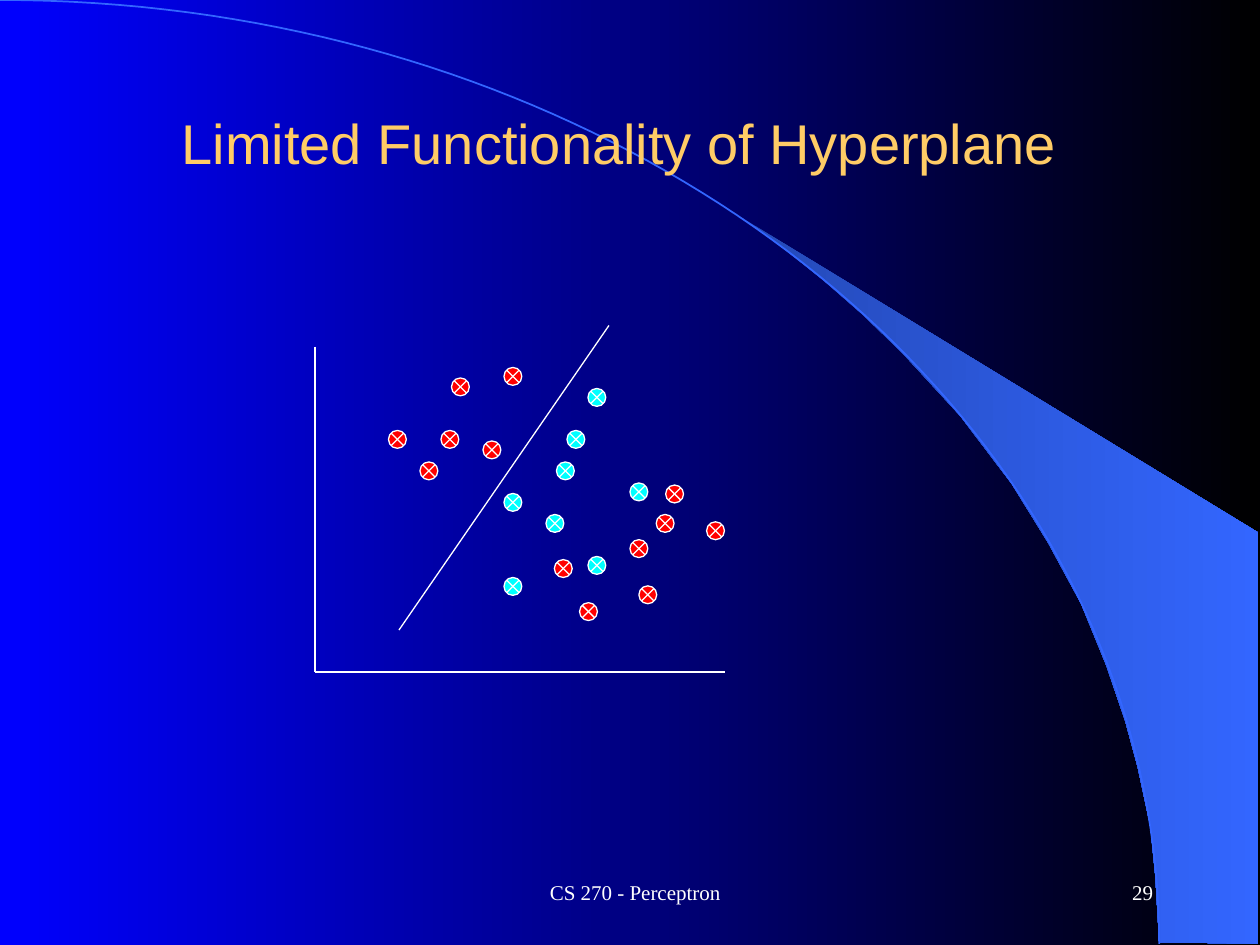
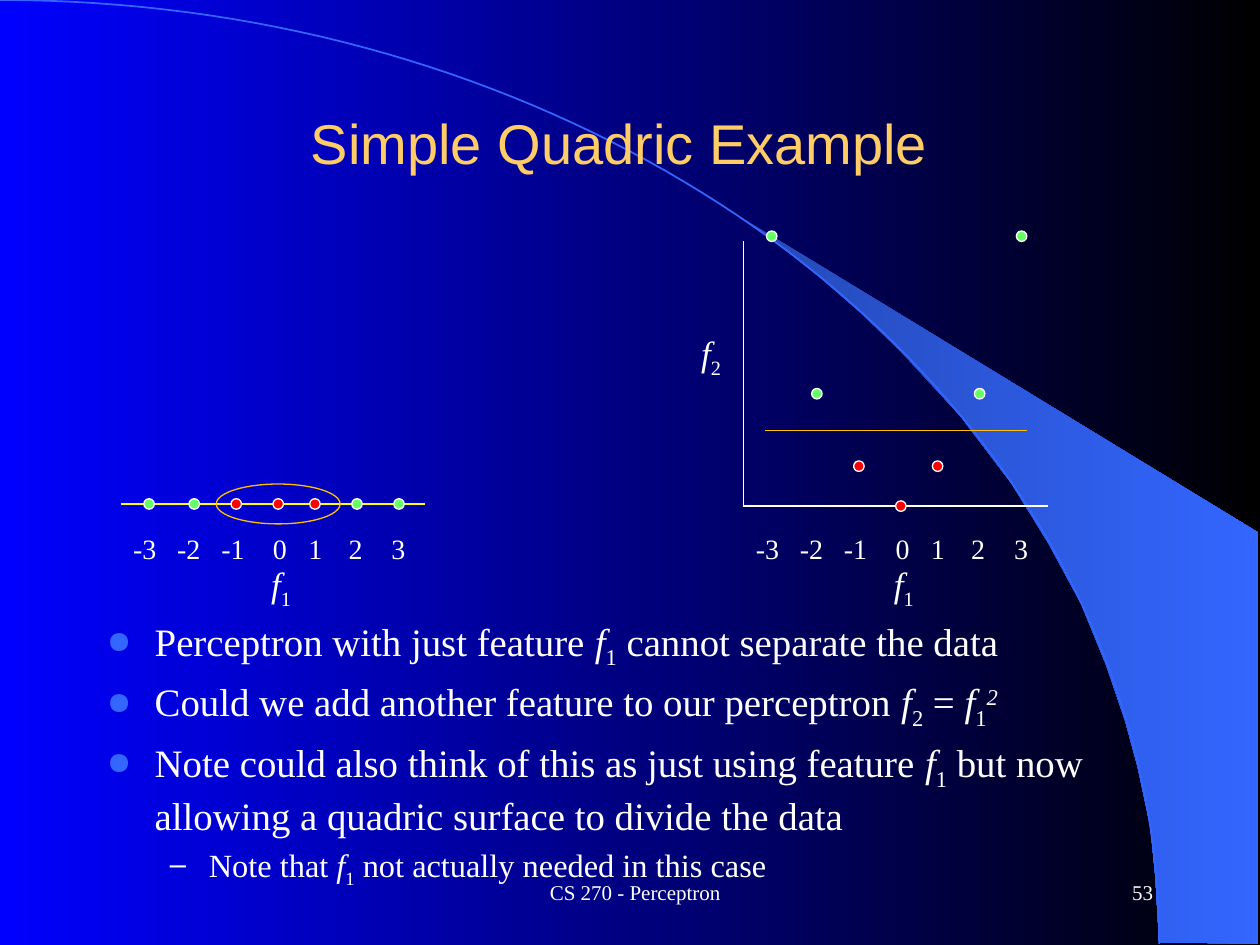
from dataclasses import dataclass

from lxml import etree
from pptx import Presentation
from pptx.dml.color import RGBColor
from pptx.enum.shapes import MSO_CONNECTOR, MSO_SHAPE
from pptx.enum.text import MSO_ANCHOR, PP_ALIGN
from pptx.oxml.ns import qn
from pptx.util import Emu, Inches, Pt

STRAIGHT = MSO_CONNECTOR.STRAIGHT
CIRCLE = MSO_SHAPE.OVAL
CROSSED_CIRCLE = MSO_SHAPE.FLOWCHART_SUMMING_JUNCTION
TOP, MIDDLE = MSO_ANCHOR.TOP, MSO_ANCHOR.MIDDLE
LEFT, CENTER, RIGHT = PP_ALIGN.LEFT, PP_ALIGN.CENTER, PP_ALIGN.RIGHT

BLUE = RGBColor(0x00, 0x00, 0xFF)
BLACK = RGBColor(0x00, 0x00, 0x00)
WHITE = RGBColor(0xFF, 0xFF, 0xFF)
GOLD = RGBColor(0xFF, 0xCC, 0x66)
AMBER = RGBColor(0xFF, 0xC0, 0x00)
YELLOW = RGBColor(0xFF, 0xFF, 0x00)
RED = RGBColor(0xFF, 0x00, 0x00)
CYAN = RGBColor(0x00, 0xFF, 0xFF)
GREEN = RGBColor(0x66, 0xFF, 0x66)
SKY = RGBColor(0x33, 0x66, 0xFF)
DEEP_SKY = RGBColor(0x24, 0x49, 0xB6)

SERIF, SANS = "Times New Roman", "Arial"
THIN = Pt(0.75)

# The slide is a grid of 120 columns by 90 rows
SLIDE_WIDTH, SLIDE_HEIGHT = Inches(10), Inches(7.5)
COLUMNS, ROWS = 120, 90
CELL = SLIDE_WIDTH / COLUMNS


def cells(count):
    return Emu(round(count * CELL))


@dataclass
class Box:
    """An area of the slide, in grid cells."""
    left: float
    top: float
    width: float
    height: float

    def inner(self, left, top, width, height):
        return Box(self.left + left, self.top + top, width, height)

    def point(self, across, down):
        return cells(self.left + across), cells(self.top + down)

    def emu(self):
        return [cells(n) for n in (self.left, self.top, self.width, self.height)]


PAGE = Box(0, 0, COLUMNS, ROWS)
TITLE = Box(8, 8, 102, 11)
FOOTER = Box(38, 82, 45, 6)
PAGE_NUMBER = Box(86, 82, 25, 6)
SCATTER = Box(30, 33, 39, 31)
NUMBER_LINE = Box(11.5, 23, 29, 25)
QUADRIC_PLOT = Box(70.8, 23, 29, 25.2)
BODY = Box(9, 58.2, 102, 23.4)

# Background curve and the wedge beside it, in inches
ARC = [(0, 0), (5.08, 0), (9.2, 3.35), (9.2, 7.49)]
ARC_STEPS = 80
WEDGE = [
    (9.2, 7.48), (9.99, 7.49), (9.99, 4.23), (5.89, 1.73), (6.24, 1.99),
    (6.53, 2.22), (6.85, 2.5), (7.16, 2.8), (7.62, 3.3), (8.03, 3.84),
    (8.32, 4.31), (8.58, 4.79), (8.78, 5.28), (8.93, 5.72), (9.03, 6.09),
    (9.13, 6.56), (9.17, 6.96)]

# Top left corners of the scattered points, in cells of the plot
SCATTER_POINTS = {
    CYAN: [(26, 4), (18, 14), (23, 11), (24, 8), (18, 22), (22, 16), (30, 13),
           (26, 20)],
    RED: [(10, 11), (13, 3), (33.4, 13.2), (16, 9), (7, 8), (18, 2), (12, 8),
          (37.3, 16.7), (32.5, 16), (30.85, 22.8), (30, 18.4), (25.2, 24.4),
          (22.8, 20.3)]}

# Feature value: column of its dot on the axis
FEATURE_COLUMNS = {-3: 2.7, -2: 7, -1: 11, 0: 15, 1: 18.5, 2: 22.5, 3: 26.5}
# Feature size: rows above the axis in the quadric plot
QUADRIC_ROWS = {0: 0, 1: 3.8, 2: 10.7, 3: 25.7}
TICK_TABS = [0.35, 0.7, 1.11, 1.39, 1.71, 2.05]

BULLETS = [
    "Perceptron with just feature |f|_1| cannot separate the data",
    "Could we add another feature to our perceptron |f|_2| = |f|_1|^2",
    "Note could also think of this as just using feature |f|_1| but now "
    "allowing a quadric surface to divide the data"]
SUB_BULLET = "Note that |f|_1| not actually needed in this case"


# Drawing helpers

def set_gradient(fill, start, end):
    fill.gradient()
    fill.gradient_angle = 0
    for stop, color in zip(fill.gradient_stops, (start, end)):
        stop.color.rgb = color


def add_line(slide, start, end, color=WHITE):
    line = slide.shapes.add_connector(STRAIGHT, *start, *end)
    line.line.color.rgb = color
    line.line.width = THIN
    etree.SubElement(line._element.spPr, qn("a:effectLst"))


def add_mark(slide, kind, box, fill, outline=WHITE):
    shape = slide.shapes.add_shape(kind, *box.emu())
    shape.shadow.inherit = False
    if fill is None:
        shape.fill.background()
    else:
        shape.fill.solid()
        shape.fill.fore_color.rgb = fill
    shape.line.color.rgb = outline
    shape.line.width = THIN


def add_outline(slide, points, close):
    points = [(Inches(x), Inches(y)) for x, y in points]
    builder = slide.shapes.build_freeform(*points[0])
    builder.add_line_segments(points[1:], close=close)
    shape = builder.convert_to_shape()
    shape.shadow.inherit = False
    return shape


def add_frame(slide, box, anchor=TOP):
    frame = slide.shapes.add_textbox(*box.emu()).text_frame
    frame.word_wrap = True
    frame.vertical_anchor = anchor
    return frame


def style(paragraph, size, color=WHITE, font=SERIF, align=LEFT):
    paragraph.alignment = align
    paragraph.font.size = Pt(size)
    paragraph.font.name = font
    paragraph.font.color.rgb = color


def add_formula(paragraph, markup):
    """Pieces are split by |; f is italic, _ lowers and ^ raises."""
    for piece in markup.split("|"):
        run = paragraph.add_run()
        run.text = piece.lstrip("_^")
        if piece == "f" or piece.startswith("^"):
            run.font.italic = True
        baseline = {"_": "-25000", "^": "30000"}.get(piece[0])
        if baseline:
            run._r.get_or_add_rPr().set("baseline", baseline)


def add_text(slide, box, text, size, anchor=TOP, **look):
    paragraph = add_frame(slide, box, anchor).paragraphs[0]
    style(paragraph, size, **look)
    add_formula(paragraph, text)


def set_bullet(paragraph, character, color, percent, margin, hanging):
    properties = paragraph._p.get_or_add_pPr()
    properties.set("marL", str(Inches(margin)))
    properties.set("indent", str(-Inches(hanging)))
    bullet_color = etree.SubElement(properties, qn("a:buClr"))
    etree.SubElement(bullet_color, qn("a:srgbClr"), val=str(color))
    etree.SubElement(properties, qn("a:buSzPct"), val=str(percent * 1000))
    etree.SubElement(properties, qn("a:buChar"), char=character)


# Regions

def add_backdrop(slide):
    set_gradient(slide.background.fill, BLUE, BLACK)
    wedge = add_outline(slide, WEDGE, close=True)
    set_gradient(wedge.fill, DEEP_SKY, SKY)
    wedge.line.fill.background()
    # Cubic curve sampled at equal steps
    curve = []
    for step in range(ARC_STEPS + 1):
        t = step / ARC_STEPS
        weights = ((1 - t) ** 3, 3 * t * (1 - t) ** 2, 3 * t * t * (1 - t), t ** 3)
        curve.append([sum(w * point[axis] for w, point in zip(weights, ARC))
                      for axis in (0, 1)])
    arc = add_outline(slide, curve, close=False)
    arc.fill.background()
    arc.line.color.rgb = SKY
    arc.line.width = Pt(1)


def add_base_slide(presentation, title, number):
    slide = presentation.slides.add_slide(presentation.slide_layouts[6])
    add_backdrop(slide)
    add_text(slide, TITLE, title, 32, MIDDLE, color=GOLD, font=SANS, align=CENTER)
    add_text(slide, FOOTER, "CS 270 - Perceptron", 12, MIDDLE, align=CENTER)
    add_text(slide, PAGE_NUMBER, str(number), 12, MIDDLE, align=RIGHT)
    return slide


def add_scatter(slide, box):
    corner = box.point(0, box.height)
    add_line(slide, box.point(0, 0), corner)
    add_line(slide, corner, box.point(box.width, box.height))
    # Separating hyperplane
    add_line(slide, box.point(8, 27), box.point(28, -2))
    for color, points in SCATTER_POINTS.items():
        for left, top in points:
            add_mark(slide, CROSSED_CIRCLE, box.inner(left, top, 1.7, 1.7), color)


def add_feature_axis(slide, box, color, rows_above):
    """Horizontal axis with its dots, tick labels and name."""
    base = box.height
    add_line(slide, box.point(0, base), box.point(box.width, base), color)
    for value, column in FEATURE_COLUMNS.items():
        row = base - rows_above[abs(value)]
        add_mark(slide, CIRCLE, box.inner(column - 0.5, row - 0.5, 1, 1),
                 RED if abs(value) < 2 else GREEN)
    # Tick labels
    ticks = add_frame(slide, box.inner(0, 27, 30.2, 4.4)).paragraphs[0]
    tabs = etree.SubElement(ticks._p.get_or_add_pPr(), qn("a:tabLst"))
    for position in TICK_TABS:
        etree.SubElement(tabs, qn("a:tab"), pos=str(Inches(position)), algn="l")
    style(ticks, 16)
    ticks.add_run().text = "\t".join(str(value) for value in FEATURE_COLUMNS)
    add_text(slide, box.inner(13.15, 30, 5.4, 5.3), "f|_1", 20)


def add_number_line(slide, box):
    add_feature_axis(slide, box, YELLOW, dict.fromkeys(QUADRIC_ROWS, 0))
    add_mark(slide, CIRCLE, box.inner(9.1, box.height - 1.9, 11.8, 3.8), None, AMBER)


def add_quadric_plot(slide, box):
    add_feature_axis(slide, box, WHITE, QUADRIC_ROWS)
    add_line(slide, box.point(0, box.height), box.point(0, 0))
    add_line(slide, box.point(2.1, 18), box.point(27, 18), AMBER)
    add_text(slide, box.inner(-5.2, 8, 5.4, 5.3), "f|_2", 20)


def add_body(slide, box):
    frame = add_frame(slide, box)
    for index, markup in enumerate(BULLETS + [SUB_BULLET]):
        paragraph = frame.add_paragraph() if index else frame.paragraphs[0]
        if markup == SUB_BULLET:
            paragraph.level = 1
            set_bullet(paragraph, "–", WHITE, 90, 0.81, 0.31)
            size = 18.5
        else:
            set_bullet(paragraph, "●", SKY, 80, 0.38, 0.38)
            size = 22.2
        style(paragraph, size)
        paragraph.space_before = Pt(size * 0.2)
        add_formula(paragraph, markup)


def main():
    presentation = Presentation()
    presentation.slide_width, presentation.slide_height = SLIDE_WIDTH, SLIDE_HEIGHT

    slide = add_base_slide(presentation, "Limited Functionality of Hyperplane", 29)
    add_scatter(slide, SCATTER)

    slide = add_base_slide(presentation, "Simple Quadric Example", 53)
    add_body(slide, BODY)
    add_number_line(slide, NUMBER_LINE)
    add_quadric_plot(slide, QUADRIC_PLOT)

    presentation.save("out.pptx")


if __name__ == "__main__":
    main()
